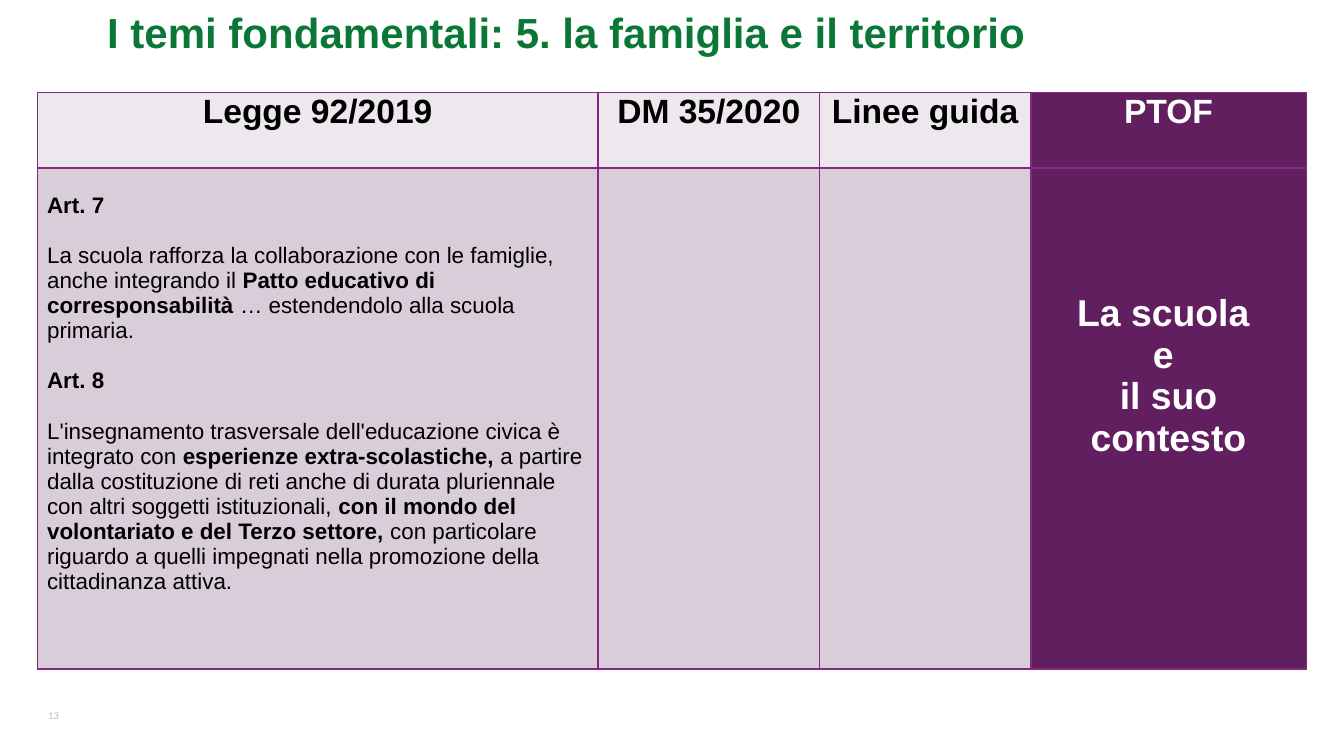
from lxml import etree
from pptx import Presentation
from pptx.dml.color import RGBColor
from pptx.enum import text as txt
from pptx.oxml import ns
from pptx.util import Cm, Pt

GREEN = RGBColor(0x0A, 0x77, 0x36)
PURPLE = RGBColor(0x62, 0x1F, 0x60)
BORDER = RGBColor(0x82, 0x29, 0x80)
HEADER_FILL = RGBColor(0xED, 0xE8, 0xED)
BODY_FILL = RGBColor(0xD8, 0xCD, 0xD8)
BLACK = RGBColor(0, 0, 0)
WHITE = RGBColor(0xFF, 0xFF, 0xFF)
GREY = RGBColor(0xB9, 0xB8, 0xBB)

CENTER = txt.PP_ALIGN.CENTER
LEFT = txt.PP_ALIGN.LEFT

COLUMN_WIDTHS = (10.59, 4.19, 3.99, 5.21)
ROW_HEIGHTS = (1.42, 9.47)
HEADERS = ("Legge 92/2019", "DM 35/2020", "Linee guida", "PTOF")

# Each paragraph is a list of (words, bold) spans
ARTICLES = [
    [("Art. 7", True)],
    [("La scuola rafforza la collaborazione con le famiglie, anche integrando il ", False),
     ("Patto educativo di corresponsabilità", True),
     (" … estendendolo alla scuola primaria.", False)],
    [("Art. 8", True)],
    [("L'insegnamento trasversale dell'educazione civica è integrato con ", False),
     ("esperienze extra-scolastiche, ", True),
     ("a partire dalla costituzione di reti anche di durata pluriennale "
      "con altri soggetti istituzionali, ", False),
     ("con il mondo del volontariato e del Terzo settore, ", True),
     ("con particolare riguardo a quelli impegnati nella promozione "
      "della cittadinanza attiva.", False)],
]
CONTEXT = ["La scuola ", "e ", "il suo contesto"]


def write(frame, paragraphs, size=12, color=BLACK, font="Arial", bold=False,
          align=LEFT, gap=0):
    """Fill a text frame with paragraphs given as strings or lists of spans."""
    for index, content in enumerate(paragraphs):
        para = frame.paragraphs[0] if index == 0 else frame.add_paragraph()
        para.alignment = align
        para.line_spacing = 1.0
        para.space_before = Pt(gap if index else 0)
        para.space_after = Pt(0)
        spans = [(content, bold)] if isinstance(content, str) else content
        for words, is_bold in spans:
            span = para.add_run()
            span.text = words
            span.font.name = font
            span.font.size = Pt(size)
            span.font.bold = is_bold
            span.font.color.rgb = color


def set_margins(owner, left=0, top=0, right=0, bottom=0):
    owner.margin_left, owner.margin_top = Cm(left), Cm(top)
    owner.margin_right, owner.margin_bottom = Cm(right), Cm(bottom)


def style_cell(cell, fill, side=0.13, top=0):
    set_margins(cell, side, top, side)
    properties = cell._tc.get_or_add_tcPr()
    for edge in ("a:lnL", "a:lnR", "a:lnT", "a:lnB"):
        line = etree.SubElement(properties, ns.qn(edge), w=str(Pt(1)))
        solid = etree.SubElement(line, ns.qn("a:solidFill"))
        etree.SubElement(solid, ns.qn("a:srgbClr"), val=str(BORDER))
    cell.fill.solid()
    cell.fill.fore_color.rgb = fill


def add_title(page, left, top, width, height):
    title = page.shapes.title
    title.left, title.top = Cm(left), Cm(top)
    title.width, title.height = Cm(width), Cm(height)
    frame = title.text_frame
    frame.word_wrap = True
    frame.auto_size = txt.MSO_AUTO_SIZE.NONE
    frame.vertical_anchor = txt.MSO_ANCHOR.MIDDLE
    set_margins(frame)
    write(frame, ["I temi fondamentali: 5. la famiglia e il territorio"],
          size=22.5, color=GREEN, bold=True, align=CENTER)


def add_law_table(page, left, top, width, height):
    table = page.shapes.add_table(len(ROW_HEIGHTS), len(COLUMN_WIDTHS), Cm(left),
                                  Cm(top), Cm(width), Cm(height)).table
    for column, column_width in zip(table.columns, COLUMN_WIDTHS):
        column.width = Cm(column_width)
    for row, row_height in zip(table.rows, ROW_HEIGHTS):
        row.height = Cm(row_height)

    # Header row and fills; the last column is dark
    last = len(HEADERS) - 1
    for index, header in enumerate(HEADERS):
        dark = index == last
        head = table.cell(0, index)
        style_cell(head, PURPLE if dark else HEADER_FILL)
        write(head.text_frame, [header], size=18, bold=True, align=CENTER,
              color=WHITE if dark else BLACK)

    # Body row
    articles, context = table.cell(1, 0), table.cell(1, last)
    style_cell(articles, BODY_FILL, side=0.18, top=0.47)
    write(articles.text_frame, ARTICLES, gap=13.5)
    for index in range(1, last):
        style_cell(table.cell(1, index), BODY_FILL)
    style_cell(context, PURPLE, top=2.36)
    write(context.text_frame, CONTEXT, size=20, color=WHITE, bold=True, align=CENTER)


def add_page_number(page, left, top, width, height):
    box = page.shapes.add_textbox(Cm(left), Cm(top), Cm(width), Cm(height))
    frame = box.text_frame
    frame.word_wrap = False
    frame.vertical_anchor = txt.MSO_ANCHOR.MIDDLE
    set_margins(frame, top=0.1, right=0.18, bottom=0.1)
    write(frame, ["13"], size=5, color=GREY, font="Lato")


def main():
    deck = Presentation()
    deck.slide_width, deck.slide_height = Cm(25.4), Cm(14.28)
    page = deck.slides.add_slide(deck.slide_layouts.get_by_name("Title Only"))
    add_page_number(page, 0.91, 13.31, 0.89, 0.41)
    add_law_table(page, 0.71, 1.75, sum(COLUMN_WIDTHS), sum(ROW_HEIGHTS))
    add_title(page, 1.09, 0, 19.25, 1.19)
    deck.save("out.pptx")


if __name__ == "__main__":
    main()
